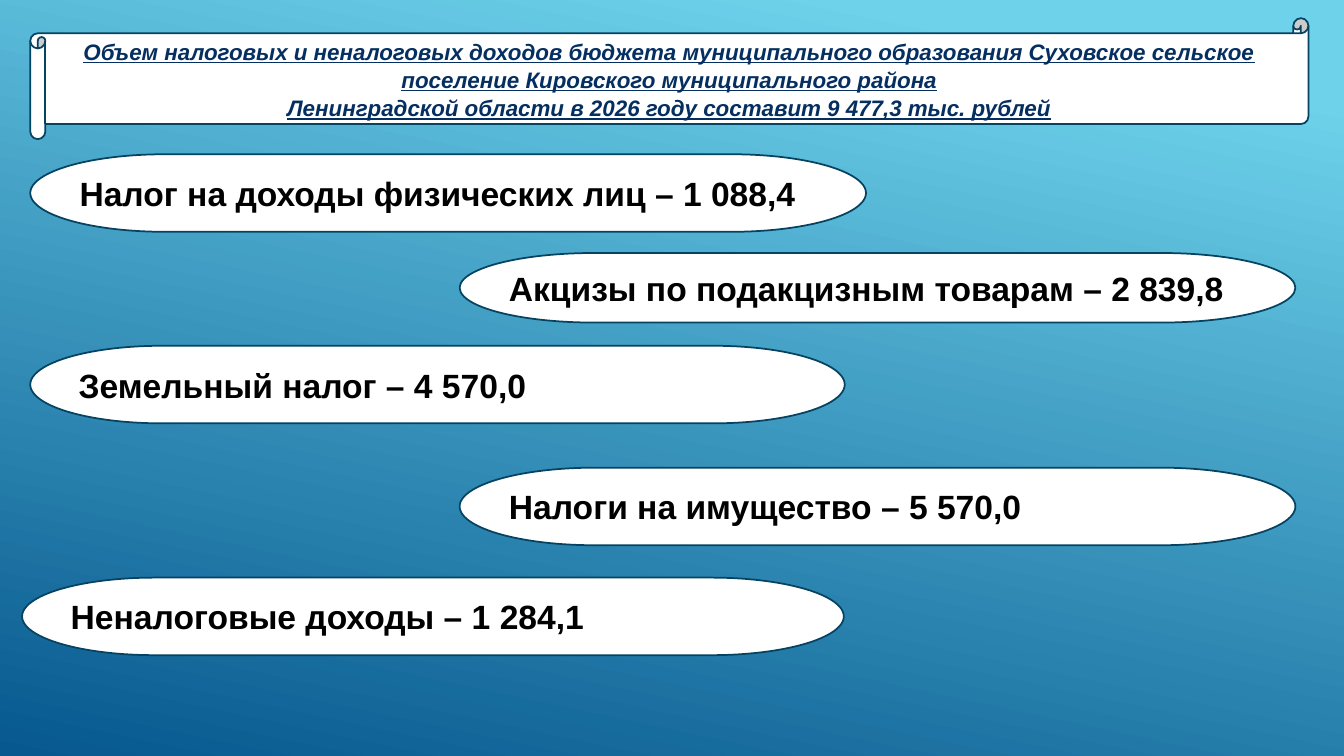
from dataclasses import dataclass
from pptx import Presentation
from pptx.dml.color import RGBColor as Rgb
from pptx.enum.shapes import MSO_SHAPE as Kind
from pptx.enum.text import MSO_ANCHOR as Anchor, MSO_AUTO_SIZE as Fit, PP_ALIGN as Align
from pptx.util import Pt


@dataclass(frozen=True)
class Theme:
    font: str = "Arial"
    head: int = 16
    body: int = 24
    edge: float = 1.25
    white: Rgb = Rgb(0xFF, 0xFF, 0xFF)
    black: Rgb = Rgb(0, 0, 0)
    navy: Rgb = Rgb(0x05, 0x2F, 0x61)
    line: Rgb = Rgb(0x05, 0x43, 0x61)
    light: Rgb = Rgb(0x6E, 0xD2, 0xEB)
    deep: Rgb = Rgb(0x06, 0x58, 0x8E)


THEME = Theme()
TITLE = (
    "Объем налоговых и неналоговых доходов бюджета муниципального образования "
    "Суховское сельское поселение Кировского муниципального района",
    "Ленинградской области в 2026 году составит 9 477,3 тыс. рублей",
)
LEFT, RIGHT = 21.6, 328.3
TALL, WIDE = 55.4, 597
TAXES = (
    ("Налог на доходы физических лиц – 1 088,4", (LEFT, 110.2, WIDE, TALL)),
    ("Акцизы по подакцизным товарам – 2 839,8", (RIGHT, 180.7, WIDE, 49.7)),
    ("Земельный налог – 4 570,0", (LEFT, 247, 581.8, TALL)),
    ("Налоги на имущество – 5 570,0", (RIGHT, 334.1, WIDE, TALL)),
    ("Неналоговые доходы – 1 284,1", (15.8, 412.6, 587, TALL)),
)


def add_panel(slide, kind, box):
    panel = slide.shapes.add_shape(kind, *map(Pt, box))
    panel.shadow.inherit = False
    panel.fill.solid()
    panel.fill.fore_color.rgb = THEME.white
    panel.line.color.rgb = THEME.line
    panel.line.width = Pt(THEME.edge)
    return panel


def set_font(par, size, color):
    font = par.font
    font.name = THEME.font
    font.size = Pt(size)
    font.bold = True
    font.color.rgb = color
    return font


def paint_back(slide):
    fill = slide.background.fill
    fill.gradient()
    fill.gradient_angle = 360 - 102
    stops = zip(fill.gradient_stops, (0.1, 1), (THEME.light, THEME.deep))
    for stop, place, color in stops:
        stop.position = place
        stop.color.rgb = color


def add_head(slide, box):
    scroll = add_panel(slide, Kind.HORIZONTAL_SCROLL, box)
    left, top, width, height = box
    roll = height / 8
    title = slide.shapes.title
    scroll.element.addnext(title.element)
    title.left, title.top = Pt(left + roll), Pt(top + roll)
    title.width, title.height = Pt(width - 2 * roll), Pt(height - 2 * roll)
    frame = title.text_frame
    frame.text = "\n".join(TITLE)
    frame.word_wrap = True
    frame.auto_size = Fit.NONE
    frame.vertical_anchor = Anchor.MIDDLE
    frame.margin_top = frame.margin_bottom = 0
    for par in frame.paragraphs:
        par.alignment = Align.CENTER
        par.line_spacing = 1.05
        font = set_font(par, THEME.head, THEME.navy)
        font.italic = font.underline = True


def add_tax(slide, text, box):
    pill = add_panel(slide, Kind.FLOWCHART_TERMINATOR, box)
    frame = pill.text_frame
    frame.text = text
    frame.word_wrap = True
    frame.vertical_anchor = Anchor.MIDDLE
    par = frame.paragraphs[0]
    par.alignment = Align.LEFT
    set_font(par, THEME.body, THEME.black)


def main():
    deck = Presentation()
    deck.slide_width, deck.slide_height = Pt(960), Pt(540)
    slide = deck.slides.add_slide(deck.slide_layouts[5])
    paint_back(slide)
    add_head(slide, (LEFT, 13, 913, 86.4))
    for text, box in TAXES:
        add_tax(slide, text, box)
    deck.save("out.pptx")


if __name__ == "__main__":
    main()
